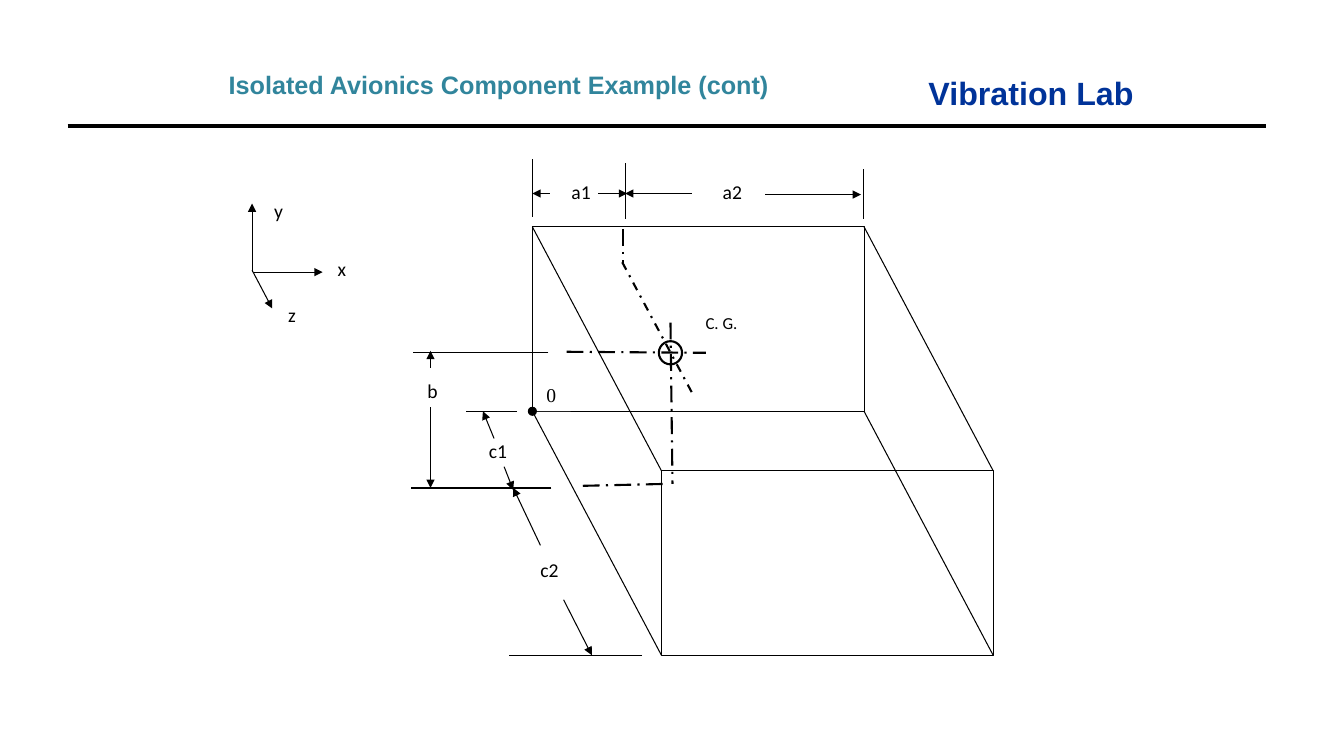
from pptx import Presentation
from pptx.util import Inches, Pt
from pptx.dml.color import RGBColor
from pptx.enum.dml import MSO_LINE_DASH_STYLE as Dash
from pptx.enum.shapes import MSO_CONNECTOR, MSO_SHAPE
from pptx.enum.text import MSO_ANCHOR, PP_ALIGN
from pptx.oxml.ns import qn
from lxml.etree import SubElement

BLACK = RGBColor(0x00, 0x00, 0x00)
WHITE = RGBColor(0xFF, 0xFF, 0xFF)
NAVY = RGBColor(0x00, 0x33, 0x99)
TEAL = RGBColor(0x31, 0x85, 0x9C)
THIN, MEDIUM, BOLD, RULE = 0.75, 1, 1.5, 2.25

# Grid of the drawing, in inches: columns, rows and the depth of the box
LEFT, CG_BACK, CG, RIGHT = 5.28, 6.2, 6.65, 8.57
TOP, CG_ROW, BASE, CG_BASE, FRONT_BASE = 2.25, 3.5, 4.08, 4.84, 6.5
DEPTH_X, DEPTH_Y = 1.28, 2.42
A_ROW, B_COLUMN = 1.92, 4.27
AXIS_X, AXIS_Y = 2.5, 2.7

# Labels: text, left, top, width, height, size, font
LABELS = [
    ("0", 5.32, 3.75, 0.34, 0.33, 14, "Times New Roman"),
    ("b", 4.14, 3.71, 0.4, 0.38, 14, "Calibri"),
    ("c1", 4.75, 4.31, 0.4, 0.38, 14, "Calibri"),
    ("c2", 5.26, 5.49, 0.61, 0.38, 14, "Calibri"),
    ("a1", 5.57, 1.74, 0.4, 0.38, 14, "Calibri"),
    ("a2", 7.07, 1.74, 0.67, 0.38, 14, "Calibri"),
    ("C. G.", 6.9, 3.05, 0.74, 0.33, 12, "Calibri"),
    ("x", 3.25, 2.5, 0.36, 0.3, 14, "Calibri"),
    ("y", 2.62, 1.92, 0.38, 0.36, 14, "Calibri"),
    ("z", 2.76, 2.96, 0.32, 0.34, 14, "Calibri"),
]

# Centre-of-gravity lines: start, end, dash
CG_LINES = [
    ((CG, 3.2), (CG + 0.02, 4.8), Dash.LONG_DASH_DOT),
    ((5.62, CG_ROW - 0.01), (7, CG_ROW), Dash.LONG_DASH_DOT),
    ((6.86, 3.89), (6.16, 2.58), Dash.DASH_DOT),
    ((5.78, 4.82), (6.63, 4.8), Dash.LONG_DASH_DOT),
    ((6.18, 2.27), (6.18, 2.62), Dash.LONG_DASH_DOT),
]

# Extension lines: start, end, width
EXTENSIONS = [
    ((LEFT, 1.58), (LEFT, 2.15), THIN),
    ((CG_BACK, 1.62), (CG_BACK, 2.17), THIN),
    ((RIGHT - 0.01, 1.68), (RIGHT - 0.01, 2.17), THIN),
    ((5.44, CG_ROW), (4.1, CG_ROW), THIN),
    ((5.13, BASE), (4.62, BASE), THIN),
    ((5.47, CG_BASE), (4.08, CG_BASE), MEDIUM),
    ((6.37, FRONT_BASE), (5.05, FRONT_BASE), MEDIUM),
]

# Arrows: tip, tail
ARROWS = [
    ((LEFT, A_ROW), (5.45, A_ROW)),
    ((CG_BACK + 0.02, A_ROW), (5.93, A_ROW)),
    ((CG_BACK, A_ROW), (6.86, A_ROW)),
    ((8.54, A_ROW + 0.01), (7.59, A_ROW + 0.01)),
    ((B_COLUMN, 3.48), (B_COLUMN, 3.65)),
    ((B_COLUMN, CG_BASE), (B_COLUMN, 4.04)),
    ((4.79, BASE), (4.9, 4.35)),
    ((5.09, 4.86), (5, 4.63)),
    ((5.09, CG_BASE), (5.36, 5.41)),
    ((5.87, FRONT_BASE), (5.59, 5.95)),
    ((AXIS_X, 2.02), (AXIS_X, AXIS_Y)),
    ((3.2, AXIS_Y), (AXIS_X + 0.02, AXIS_Y)),
    ((2.7, 3.06), (AXIS_X, 2.68)),
]

presentation = Presentation()
presentation.slide_width = Inches(13.33)
presentation.slide_height = Inches(7.5)
slide = presentation.slides.add_slide(presentation.slide_layouts[6])


def add_text(text, left, top, width, height, size=14, font="Calibri",
             color=BLACK, bold=False, fill=None):
    box = slide.shapes.add_textbox(*map(Inches, (left, top, width, height)))
    if fill is not None:
        box.fill.solid()
        box.fill.fore_color.rgb = fill
    frame = box.text_frame
    frame.word_wrap = True
    frame.vertical_anchor = MSO_ANCHOR.TOP
    paragraph = frame.paragraphs[0]
    paragraph.alignment = PP_ALIGN.LEFT
    run = paragraph.add_run()
    run.text = text
    run.font.size, run.font.name, run.font.bold = Pt(size), font, bold
    run.font.color.rgb = color


def add_line(start, end, width=THIN, dash=None, arrow=False):
    line = slide.shapes.add_connector(
        MSO_CONNECTOR.STRAIGHT, *map(Inches, (*start, *end)))
    line.line.color.rgb = BLACK
    line.line.width = Pt(width)
    if dash is not None:
        line.line.dash_style = dash
    if arrow:
        SubElement(line.line._get_or_add_ln(), qn("a:headEnd"), type="triangle")
    SubElement(line._element.spPr, qn("a:effectLst"))


def add_outline(kind, left, top, width, height, line=THIN, fill=None):
    shape = slide.shapes.add_shape(
        kind, *map(Inches, (left, top, width, height)))
    shape.shadow.inherit = False
    if fill is None:
        shape.fill.background()
    else:
        shape.fill.solid()
        shape.fill.fore_color.rgb = fill
    shape.line.color.rgb = BLACK
    shape.line.width = Pt(line)


def add_circle(x, y, diameter, **style):
    add_outline(MSO_SHAPE.OVAL, x - diameter / 2, y - diameter / 2,
                diameter, diameter, **style)


# Header
add_text("Vibration Lab", 9.11, 0.68, 3.13, 0.91, size=23, font="Arial",
         color=NAVY, bold=True)
add_line((0.67, 1.25), (12.56, 1.25), RULE)
add_text("Isolated Avionics Component Example (cont)", 2.17, 0.64, 5.75, 0.4,
         size=18, font="Arial", color=TEAL, bold=True)

# Box: back face, front face and the four edges between them
for shift_x, shift_y in ((0, 0), (DEPTH_X, DEPTH_Y)):
    add_outline(MSO_SHAPE.RECTANGLE, LEFT + shift_x, TOP + shift_y,
                RIGHT - LEFT, BASE - TOP)
for x in (LEFT, RIGHT):
    for y in (TOP, BASE):
        add_line((x, y), (x + DEPTH_X, y + DEPTH_Y))

# Centre of gravity
add_circle(CG, CG_ROW, 0.23, line=BOLD, fill=WHITE)
for start, end, dash in CG_LINES:
    add_line(start, end, BOLD, dash=dash)

# Labels and origin
for text, left, top, width, height, size, font in LABELS:
    add_text(text, left, top, width, height, size=size, font=font, fill=WHITE)
add_circle(LEFT, BASE, 0.08, fill=BLACK)

# Dimensions and axes
for start, end, width in EXTENSIONS:
    add_line(start, end, width)
for tip, tail in ARROWS:
    add_line(tip, tail, arrow=True)

presentation.save("out.pptx")
